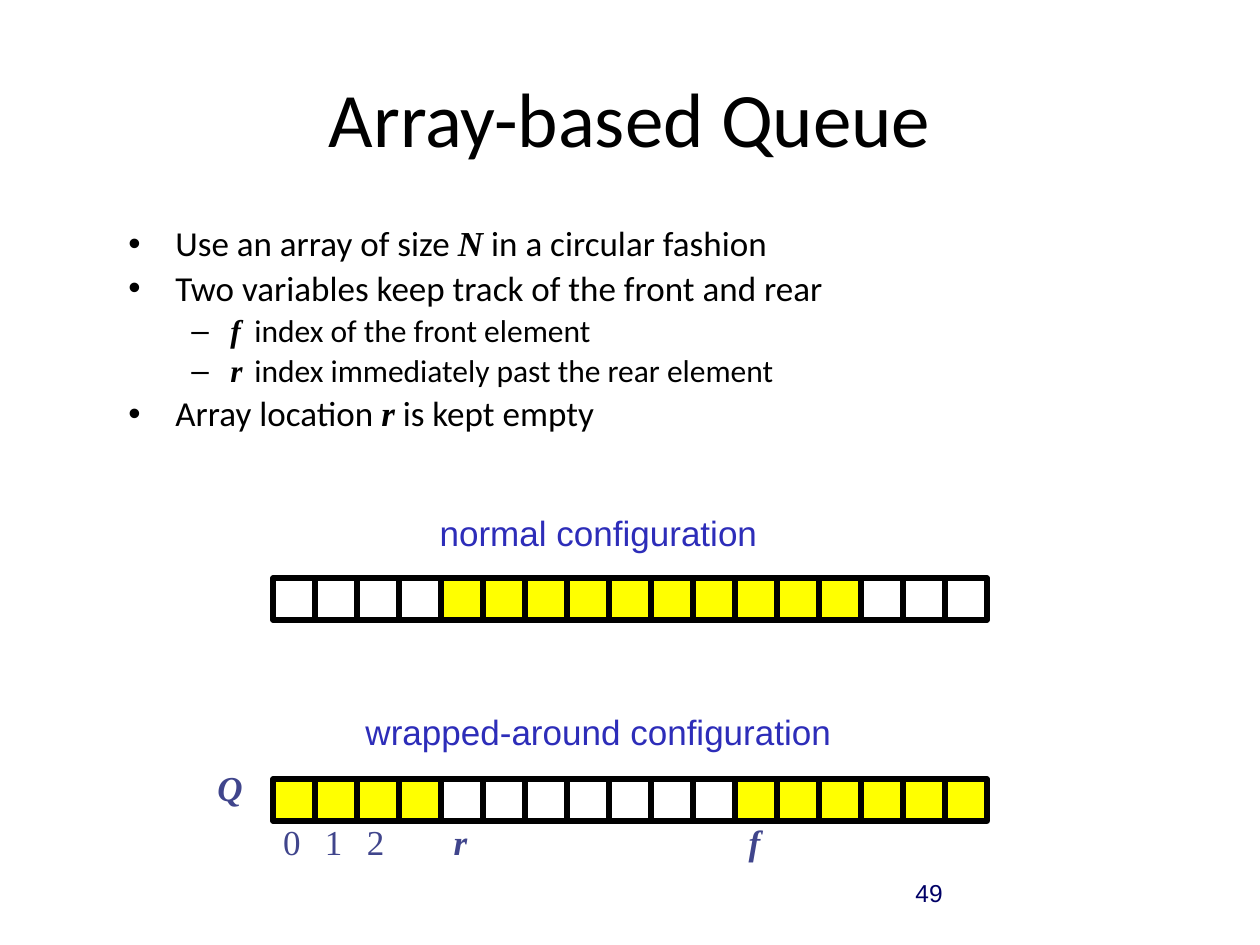
from lxml.etree import SubElement
from pptx import Presentation
from pptx.dml.color import RGBColor as RGB
from pptx.enum.shapes import MSO_SHAPE as Shape
from pptx.enum.text import MSO_ANCHOR as Anchor, PP_ALIGN as Align
from pptx.oxml.ns import qn
from pptx.util import Emu, Pt

PX = 914400 // 126  # one px in EMU
COLORS = {"black": "000000", "white": "FFFFFF", "used": "FFFF00",
          "caption": "2D2DB9", "label": "40458C", "number": "000066"}
SERIF = "Times New Roman"

TITLE = "Array-based Queue"
# Level, then runs as (text, is a variable)
BULLETS = [
    (0, [("Use an array of size ", False), ("N", True), (" in a circular fashion", False)]),
    (0, [("Two variables keep track of the front and rear", False)]),
    (1, [("f", True), (" \tindex of the front element", False)]),
    (1, [("r", True), ("\tindex immediately past the rear element", False)]),
    (0, [("Array location ", False), ("r", True), (" is kept empty", False)]),
]
# Mark, size in pt, left margin in px, hanging indent in px
LEVELS = [("•", 20, 47, 47), ("–", 18, 102, 39)]

CELL, LEFT, COUNT = 42, 273, 17
# Caption, its box, top of the cells, indices in use
ROWS = [
    ("normal configuration", (426, 505, 345, 53), 578, set(range(4, 14))),
    ("wrapped-around configuration", (350, 704, 497, 53), 779,
     set(range(COUNT)) - set(range(4, 11))),
]
INDICES = {0: "0", 1: "1", 2: "2"}
POINTERS = {4: "r", 11: "f"}


def emu(box):
    return [Emu(n * PX) for n in box]


def add_box(shapes, box, anchor=Anchor.TOP, inset=True, wrap=True):
    frame = shapes.add_textbox(*emu(box)).text_frame
    frame.word_wrap = wrap
    frame.vertical_anchor = anchor
    if not inset:
        frame.margin_left = frame.margin_right = 0
        frame.margin_top = frame.margin_bottom = 0
    return frame


def style(font, name, size, color, slant=False):
    font.name, font.size = name, Pt(size)
    font.color.rgb = RGB.from_string(COLORS[color])
    font.bold = font.italic = slant


def add_line(shapes, text, box, look, align=Align.CENTER, **opts):
    """Add a text box of one paragraph; look holds the arguments of style."""
    para = add_box(shapes, box, **opts).paragraphs[0]
    para.text, para.alignment = text, align
    style(para.font, *look)


def add_bullets(shapes):
    frame = add_box(shapes, (116, 220, 1029, 262))
    for i, (level, runs) in enumerate(BULLETS):
        para = frame.add_paragraph() if i else frame.paragraphs[0]
        mark, size, margin, hang = LEVELS[level]
        para.level, para.line_spacing = level, 0.9
        para.space_before = Pt(size * 0.2)
        props = para._p.get_or_add_pPr()
        props.set("marL", str(margin * PX))
        props.set("indent", str(-hang * PX))
        SubElement(props, qn("a:buFont")).set("typeface", "Arial")
        SubElement(props, qn("a:buChar")).set("char", mark)
        for text, var in runs:
            run = para.add_run()
            run.text = text
            style(run.font, SERIF if var else "Calibri", size, "black", var)


def add_cells(shapes, top, used):
    for i in range(COUNT):
        cell = shapes.add_shape(Shape.RECTANGLE, *emu((LEFT + i * CELL, top, CELL, CELL)))
        cell.shadow.inherit = False
        cell.fill.solid()
        cell.fill.fore_color.rgb = RGB.from_string(COLORS["used" if i in used else "white"])
        cell.line.color.rgb = RGB.from_string(COLORS["black"])
        cell.line.width = Pt(3)


def add_labels(shapes, top):
    plain, slant = (SERIF, 20, "label"), (SERIF, 20, "label", True)
    add_line(shapes, "Q", (210, top - 12, 40, 50), slant, inset=False)
    for i, text in INDICES.items():
        add_line(shapes, text, (LEFT + i * CELL + 10, top + CELL, 21, 50), plain,
                 Align.LEFT, inset=False, wrap=False)
    for i, text in POINTERS.items():
        add_line(shapes, text, (LEFT + i * CELL, top + CELL, 39, 50), slant, inset=False)


def main():
    deck = Presentation()
    deck.slide_width, deck.slide_height = emu((1260, 945))
    shapes = deck.slides.add_slide(deck.slide_layouts[6]).shapes
    add_line(shapes, "49", (903, 861, 262, 63), ("Arial", 14, "number"),
             Align.LEFT, anchor=Anchor.MIDDLE)
    add_line(shapes, TITLE, (63, 38, 1134, 157), ("Calibri", 44, "black"),
             anchor=Anchor.MIDDLE)
    add_bullets(shapes)
    for caption, box, top, used in ROWS:
        group = shapes.add_group_shape().shapes
        add_cells(group, top, used)
        add_line(shapes, caption, box, ("Arial", 20, "caption"), wrap=False)
    add_labels(group, top)  # only the last row is labelled
    deck.save("out.pptx")


if __name__ == "__main__":
    main()
